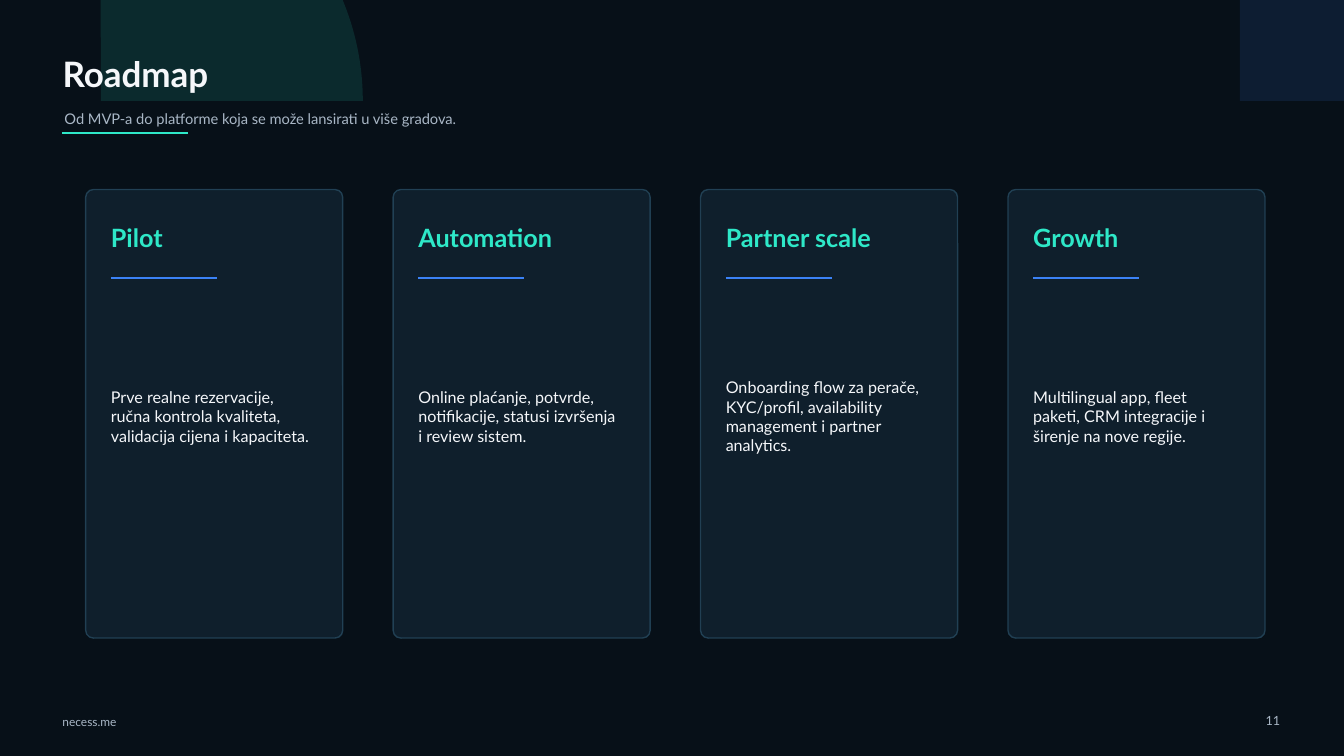
import pptx
import pptx.util
import pptx.dml.color
import pptx.enum.shapes
import pptx.enum.text
import pptx.oxml
import pptx.oxml.ns

Pt = pptx.util.Pt
RGBColor = pptx.dml.color.RGBColor
Shape = pptx.enum.shapes.MSO_SHAPE
Align = pptx.enum.text.PP_ALIGN

NIGHT = RGBColor(0x07, 0x10, 0x18)
PANEL = RGBColor(0x0F, 0x1F, 0x2C)
EDGE = RGBColor(0x25, 0x47, 0x5C)
MINT = RGBColor(0x2E, 0xE8, 0xC8)
BLUE = RGBColor(0x3B, 0x82, 0xF6)
WHITE = RGBColor(0xF5, 0xF7, 0xFA)
GREY = RGBColor(0xA9, 0xB7, 0xC6)

PAGE_WIDTH, PAGE_HEIGHT = 960, 540
MARGIN = 44.64
CARD_PITCH = 219.6
PHASES = [
    ("Pilot", "Prve realne rezervacije, ručna kontrola kvaliteta, validacija cijena i kapaciteta."),
    ("Automation", "Online plaćanje, potvrde, notifikacije, statusi izvršenja i review sistem."),
    ("Partner scale", "Onboarding flow za perače, KYC/profil, availability management i partner analytics."),
    ("Growth", "Multilingual app, fleet paketi, CRM integracije i širenje na nove regije."),
]


def set_opacity(fill_owner, percent):
    color = next(fill_owner.iter(pptx.oxml.ns.qn("a:srgbClr")))
    alpha = pptx.oxml.parse_xml(
        f'<a:alpha {pptx.oxml.ns.nsdecls("a")} val="{percent * 1000}"/>')
    color.append(alpha)


def format_text(box, text, size, color, bold=False, align=Align.LEFT):
    frame = box.text_frame
    frame.text = text
    frame.word_wrap = True
    frame.auto_size = pptx.enum.text.MSO_AUTO_SIZE.NONE
    frame.vertical_anchor = pptx.enum.text.MSO_ANCHOR.MIDDLE
    frame.margin_left = frame.margin_right = frame.margin_top = frame.margin_bottom = 0
    para = frame.paragraphs[0]
    para.alignment = align
    para.font.name = "Lato"
    para.font.size = Pt(size)
    para.font.bold = bold
    para.font.color.rgb = color


def add_text(page, left, top, width, height, *style, **options):
    box = page.shapes.add_textbox(Pt(left), Pt(top), Pt(width), Pt(height))
    format_text(box, *style, **options)


def add_rule(page, left, top, length, color, weight):
    rule = page.shapes.add_connector(
        pptx.enum.shapes.MSO_CONNECTOR.STRAIGHT, Pt(left), Pt(top), Pt(left + length), Pt(top))
    rule.line.color.rgb = color
    rule.line.width = Pt(weight)
    rule.element.spPr.append(
        pptx.oxml.parse_xml(f'<a:effectLst {pptx.oxml.ns.nsdecls("a")}/>'))


def add_glow(page, left, top, size, color):
    glow = page.shapes.add_shape(Shape.ARC, Pt(left), Pt(top), Pt(size), Pt(size))
    glow.shadow.inherit = False
    glow.fill.solid()
    glow.fill.fore_color.rgb = color
    glow.line.fill.background()
    set_opacity(glow.element.spPr, 12)


def add_header(page, left, top):
    title = page.shapes.title
    title.left, title.top, title.width, title.height = Pt(left), Pt(top), Pt(604.8), Pt(39.6)
    format_text(title, "Roadmap", 25, WHITE, bold=True)
    title.element.getparent().append(title.element)
    add_text(page, left + 1.44, top + 39.6, 619.2, 25.92,
             "Od MVP-a do platforme koja se može lansirati u više gradova.", 10.5, GREY)
    add_rule(page, left, top + 62.64, 90, MINT, 2)


def add_footer(page, left, top):
    add_text(page, left, top + 2.16, 100.8, 15.84, "necess.me", 8.5, GREY)
    add_text(page, left + 837.36, top, 32.4, 18, "11", 9, GREY, align=Align.RIGHT)


def add_card(page, left, top, width, height, heading, body):
    card = page.shapes.add_shape(
        Shape.ROUNDED_RECTANGLE, Pt(left), Pt(top), Pt(width), Pt(height))
    card.adjustments[0] = 0.03
    card.shadow.inherit = False
    card.fill.solid()
    card.fill.fore_color.rgb = PANEL
    card.line.color.rgb = EDGE
    card.line.width = Pt(1)
    set_opacity(card.element.spPr.find(pptx.oxml.ns.qn("a:ln")), 85)
    inner = left + 18
    add_text(page, inner, top + 23.04, width - 36, 23.04, heading, 18, MINT, bold=True)
    add_rule(page, inner, top + 63.36, 75.6, BLUE, 1.5)
    add_text(page, inner, top + 86.4, width - 38.16, 151.2, body, 11.5, WHITE)


def build_roadmap(deck):
    page = deck.slides.add_slide(deck.slide_layouts.get_by_name("Title Only"))
    page.background.fill.solid()
    page.background.fill.fore_color.rgb = NIGHT
    add_glow(page, -115.2, -115.2, 374.4, MINT)
    add_glow(page, 684, -129.6, 403.2, BLUE)
    add_header(page, MARGIN, 32.4)
    add_footer(page, MARGIN, 505.44)
    for index, (heading, body) in enumerate(PHASES):
        add_card(page, 61.2 + index * CARD_PITCH, 135.36, 183.6, 320.4, heading, body)


def main():
    deck = pptx.Presentation()
    deck.slide_width, deck.slide_height = Pt(PAGE_WIDTH), Pt(PAGE_HEIGHT)
    build_roadmap(deck)
    deck.save("out.pptx")


if __name__ == "__main__":
    main()
